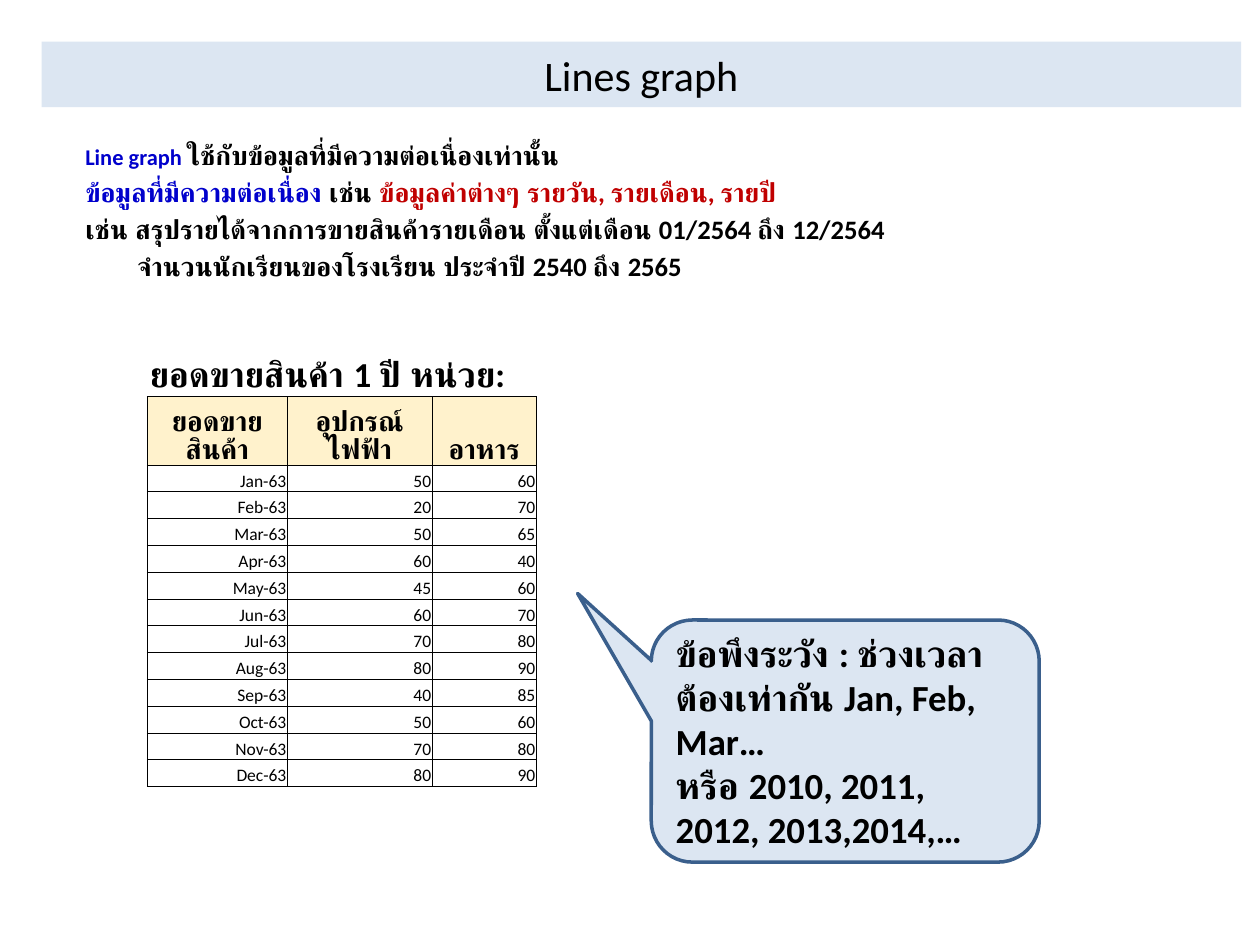
from pptx import Presentation
from pptx.dml.color import RGBColor
from pptx.enum.shapes import MSO_SHAPE
from pptx.enum.text import MSO_ANCHOR, PP_ALIGN
from pptx.oxml import parse_xml
from pptx.oxml.ns import nsdecls
from pptx.util import Cm, Pt

RECT = MSO_SHAPE.RECTANGLE
CALLOUT = MSO_SHAPE.ROUNDED_RECTANGULAR_CALLOUT
LEFT, MID, RIGHT = PP_ALIGN.LEFT, PP_ALIGN.CENTER, PP_ALIGN.RIGHT
CENTER, BOTTOM = MSO_ANCHOR.MIDDLE, MSO_ANCHOR.BOTTOM

FONT = "Calibri"
BLACK = RGBColor(0x00, 0x00, 0x00)
BLUE = RGBColor(0x00, 0x00, 0xCC)
RED = RGBColor(0xC0, 0x00, 0x00)
PALE = RGBColor(0xDC, 0xE6, 0xF2)
NAVY = RGBColor(0x3A, 0x5F, 0x8C)
CREAM = RGBColor(0xFF, 0xF2, 0xCC)

# Each paragraph is a list of runs: text, size, colour
BODY = [
    [("Line graph ", 12.8, BLUE),
     ("ใช้กับข้อมูลที่มีความต่อเนื่องเท่านั้น", 15.2, BLACK)],
    [("ข้อมูลที่มีความต่อเนื่อง ", 15.2, BLUE),
     ("เช่น ", 15.2, BLACK),
     ("ข้อมูลค่าต่างๆ รายวัน, รายเดือน, รายปี", 15.2, RED)],
    [("เช่น สรุปรายได้จากการขายสินค้ารายเดือน ตั้งแต่เดือน 01/2564 ถึง 12/2564",
      15.2, BLACK)],
    [("จำนวนนักเรียนของโรงเรียน ประจำปี 2540 ถึง 2565", 15.2, BLACK)],
]
NOTE = [
    [("ข้อพึงระวัง : ช่วงเวลาต้องเท่ากัน Jan, Feb, Mar…", 21, BLACK)],
    [("หรือ 2010, 2011, 2012, 2013,2014,…", 21, BLACK)],
]
CAPTION = [[("ยอดขายสินค้า 1 ปี หน่วย:", 20, BLACK)]]

HEADS = ["ยอดขายสินค้า", "อุปกรณ์ไฟฟ้า", "อาหาร"]
MONTHS = "Jan Feb Mar Apr May Jun Jul Aug Sep Oct Nov Dec".split()
POWER = [50, 20, 50, 60, 45, 60, 70, 80, 40, 50, 70, 80]
FOOD = [60, 70, 65, 40, 60, 70, 80, 90, 85, 60, 80, 90]
WIDTHS = [2.82, 2.92, 2.1]
HEAD_H, ROW_H = 0.86, 0.54


def write(frame, paras, align=LEFT, bold=True, gap=0):
    frame.word_wrap = True
    for i, runs in enumerate(paras):
        para = frame.paragraphs[0] if i == 0 else frame.add_paragraph()
        para.alignment = align
        para.space_before = Pt(gap)
        for text, size, color in runs:
            run = para.add_run()
            run.text = text
            font = run.font
            font.name, font.size, font.bold = FONT, Pt(size), bold
            font.color.rgb = color


def add_text(slide, box, paras, gap=0):
    shape = slide.shapes.add_textbox(*map(Cm, box))
    write(shape.text_frame, paras, gap=gap)
    return shape


def add_box(slide, kind, box, paras, align=LEFT, bold=True, line=None):
    shape = slide.shapes.add_shape(kind, *map(Cm, box))
    shape.shadow.inherit = False
    shape.fill.solid()
    shape.fill.fore_color.rgb = PALE
    if line is None:
        shape.line.fill.background()
    else:
        shape.line.color.rgb = line
        shape.line.width = Pt(2)
    shape.text_frame.vertical_anchor = CENTER
    write(shape.text_frame, paras, align, bold)
    return shape


def set_edges(cell):
    props = cell._tc.get_or_add_tcPr()
    for i, side in enumerate(("lnL", "lnR", "lnT", "lnB")):
        props.insert(i, parse_xml(
            f'<a:{side} {nsdecls("a")} w="{Pt(0.5)}"><a:solidFill>'
            f'<a:srgbClr val="{BLACK}"/></a:solidFill></a:{side}>'))


def set_cell(cell, text, head):
    cell.margin_left = cell.margin_right = cell.margin_top = Cm(0.02)
    cell.margin_bottom = 0
    cell.vertical_anchor = BOTTOM
    if head:
        cell.fill.solid()
        cell.fill.fore_color.rgb = CREAM
    else:
        cell.fill.background()
    set_edges(cell)
    size, align = (16, MID) if head else (10, RIGHT)
    write(cell.text_frame, [[(text, size, BLACK)]], align, head)


def add_sales(slide, left, top):
    rows = [HEADS] + [[f"{month}-63", str(power), str(food)]
                      for month, power, food in zip(MONTHS, POWER, FOOD)]
    high = HEAD_H + ROW_H * len(MONTHS)
    table = slide.shapes.add_table(
        len(rows), len(HEADS), Cm(left), Cm(top),
        Cm(sum(WIDTHS)), Cm(high)).table
    for col, width in zip(table.columns, WIDTHS):
        col.width = Cm(width)
    for r, row in enumerate(rows):
        table.rows[r].height = Cm(ROW_H if r else HEAD_H)
        for c, text in enumerate(row):
            set_cell(table.cell(r, c), text, r == 0)


def main():
    deck = Presentation()
    deck.slide_width, deck.slide_height = Cm(25.4), Cm(19.05)
    slide = deck.slides.add_slide(deck.slide_layouts[6])

    # Title band
    add_box(slide, RECT, (0.84, 0.84, 24.18, 1.32),
            [[("Lines graph", 24, BLACK)]], MID, False)

    # Explanation, with the last example indented
    body = add_text(slide, (1.47, 2.67, 23.29, 2.84), BODY, 3)
    last = body.text_frame.paragraphs[-1]
    last._p.get_or_add_pPr().set("marL", str(Cm(1.05)))

    # Warning callout
    note = add_box(slide, CALLOUT, (13.13, 12.5, 7.82, 4.88), NOTE, line=NAVY)
    for i, value in enumerate((-0.69, -0.61, 0.17)):
        note.adjustments[i] = value

    # Sales table and its caption
    add_text(slide, (2.77, 6.99, 8.26, 1.12), CAPTION)
    add_sales(slide, 2.97, 8)

    deck.save("out.pptx")


if __name__ == "__main__":
    main()
